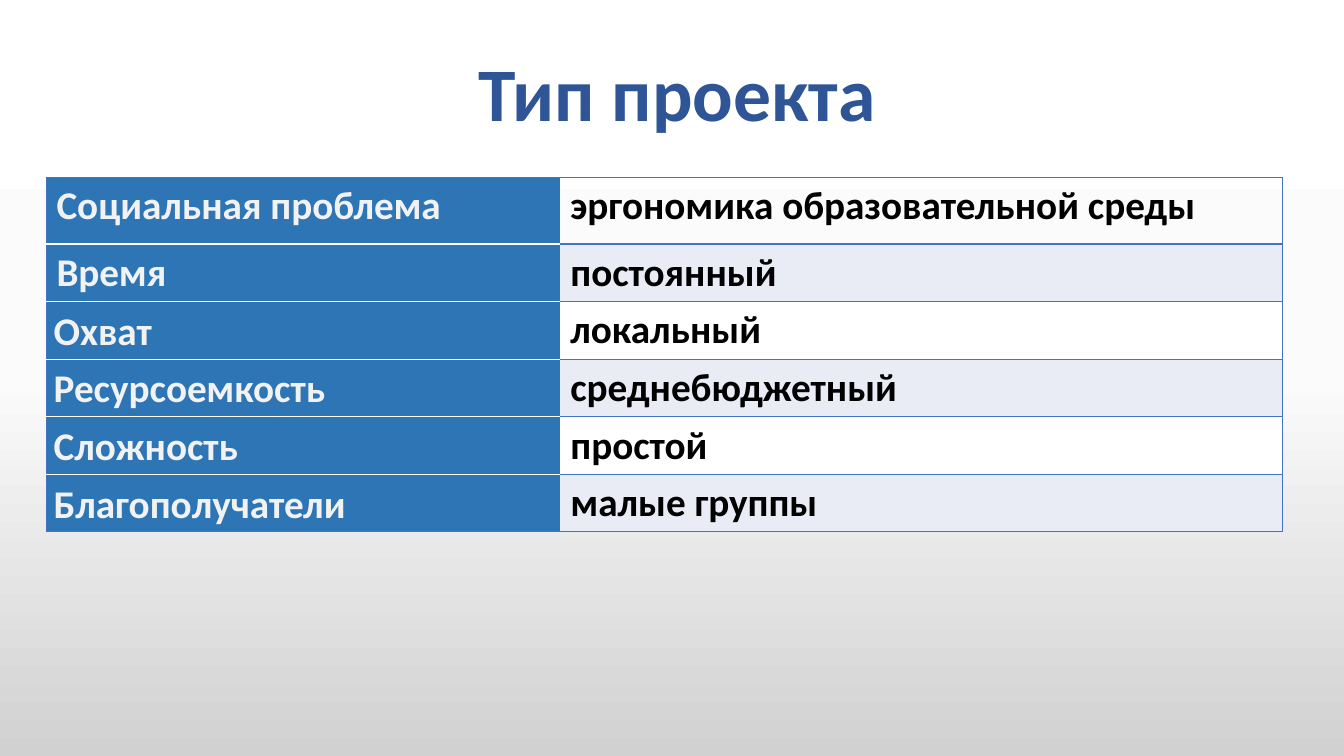
from copy import deepcopy

from lxml import etree
from pptx import Presentation
from pptx.dml.color import RGBColor
from pptx.enum.text import MSO_ANCHOR, MSO_AUTO_SIZE, PP_ALIGN
from pptx.oxml.ns import qn
from pptx.util import Cm, Pt

TOP, MIDDLE = MSO_ANCHOR.TOP, MSO_ANCHOR.MIDDLE
FIT_SHAPE = MSO_AUTO_SIZE.SHAPE_TO_FIT_TEXT
CENTER, LEFT = PP_ALIGN.CENTER, PP_ALIGN.LEFT

TITLE_BLUE = RGBColor(0x2F, 0x55, 0x97)
LABEL_BLUE = RGBColor(0x2E, 0x75, 0xB6)
LINE_BLUE = RGBColor(0x44, 0x72, 0xC4)
BAND = RGBColor(0xE9, 0xEB, 0xF5)
WHITE = RGBColor(0xFF, 0xFF, 0xFF)
LABEL_TEXT = RGBColor(0xF2, 0xF2, 0xF2)
BLACK = RGBColor(0x00, 0x00, 0x00)
SKY = RGBColor(0xFB, 0xFB, 0xFB)
GREY = RGBColor(0xD1, 0xD1, 0xD1)

PROJECT_TYPE = [
    ("Социальная проблема", "эргономика образовательной среды"),
    ("Время", "постоянный"),
    ("Охват", "локальный"),
    ("Ресурсоемкость", "среднебюджетный"),
    ("Сложность", "простой"),
    ("Благополучатели", "малые группы"),
]
COMPACT = {"vertical_anchor": MIDDLE, "margin_left": Cm(0.18), "margin_right": Cm(0.18),
           "margin_top": 0, "margin_bottom": 0}


def write(paragraph, text, size, color, align):
    paragraph.text = text
    paragraph.alignment = align
    for name, value in {"name": "Calibri", "size": Pt(size), "bold": True}.items():
        setattr(paragraph.font, name, value)
    paragraph.font.color.rgb = color


def set_borders(cell, colors):
    properties = cell._tc.get_or_add_tcPr()
    for side, color in colors.items():
        line = etree.SubElement(properties, qn(f"a:ln{side}"), w=str(Pt(1)))
        if color is None:
            etree.SubElement(line, qn("a:noFill"))
        else:
            solid = etree.SubElement(line, qn("a:solidFill"))
            etree.SubElement(solid, qn("a:srgbClr"), val=str(color))


deck = Presentation()
deck.slide_width, deck.slide_height = Cm(33.87), Cm(19.05)
slide = deck.slides.add_slide(deck.slide_layouts[5])

backdrop = slide.background.fill
backdrop.gradient()
backdrop.gradient_angle = 270
stop_list = slide._element.find(".//" + qn("a:gsLst"))
stop_list.append(deepcopy(stop_list[-1]))
for stop, position, color in zip(backdrop.gradient_stops, (0, 0.5, 1), (WHITE, SKY, GREY)):
    stop.position = position
    stop.color.rgb = color

title = slide.shapes.title
title.left, title.top, title.width, title.height = Cm(11.76), Cm(1.02), Cm(10.62), Cm(2.57)
write(title.text_frame.paragraphs[0], "Тип проекта", 54, TITLE_BLUE, CENTER)
for name, value in {"word_wrap": False, "auto_size": FIT_SHAPE, "vertical_anchor": TOP}.items():
    setattr(title.text_frame, name, value)

table = slide.shapes.add_table(
    len(PROJECT_TYPE), 2, Cm(1.17), Cm(4.47), Cm(31.14), Cm(8.93)).table
table.first_row = table.horz_banding = False
table.columns[0].width, table.columns[1].width = Cm(12.95), Cm(18.19)

last = len(PROJECT_TYPE) - 1
for index, (label, answer) in enumerate(PROJECT_TYPE):
    table.rows[index].height = Cm(1.45 if index else 1.68)
    label_cell, answer_cell = table.cell(index, 0), table.cell(index, 1)

    set_borders(label_cell, {"L": LINE_BLUE, "R": None,
                             "T": WHITE if index else LINE_BLUE,
                             "B": WHITE if index < last else LINE_BLUE})
    set_borders(answer_cell, {"L": None, "R": LINE_BLUE, "T": LINE_BLUE, "B": LINE_BLUE})

    label_cell.fill.solid()
    label_cell.fill.fore_color.rgb = LABEL_BLUE
    if index:
        answer_cell.fill.solid()
        answer_cell.fill.fore_color.rgb = BAND if index % 2 else WHITE
    else:
        answer_cell.fill.background()

    label_line = label_cell.text_frame.paragraphs[0]
    write(label_line, label, 28, LABEL_TEXT, LEFT)
    write(answer_cell.text_frame.paragraphs[0], answer, 28, BLACK, LEFT)
    if index > 1:
        label_line.line_spacing = 1.07
        for name, value in COMPACT.items():
            setattr(label_cell, name, value)

deck.save("out.pptx")
